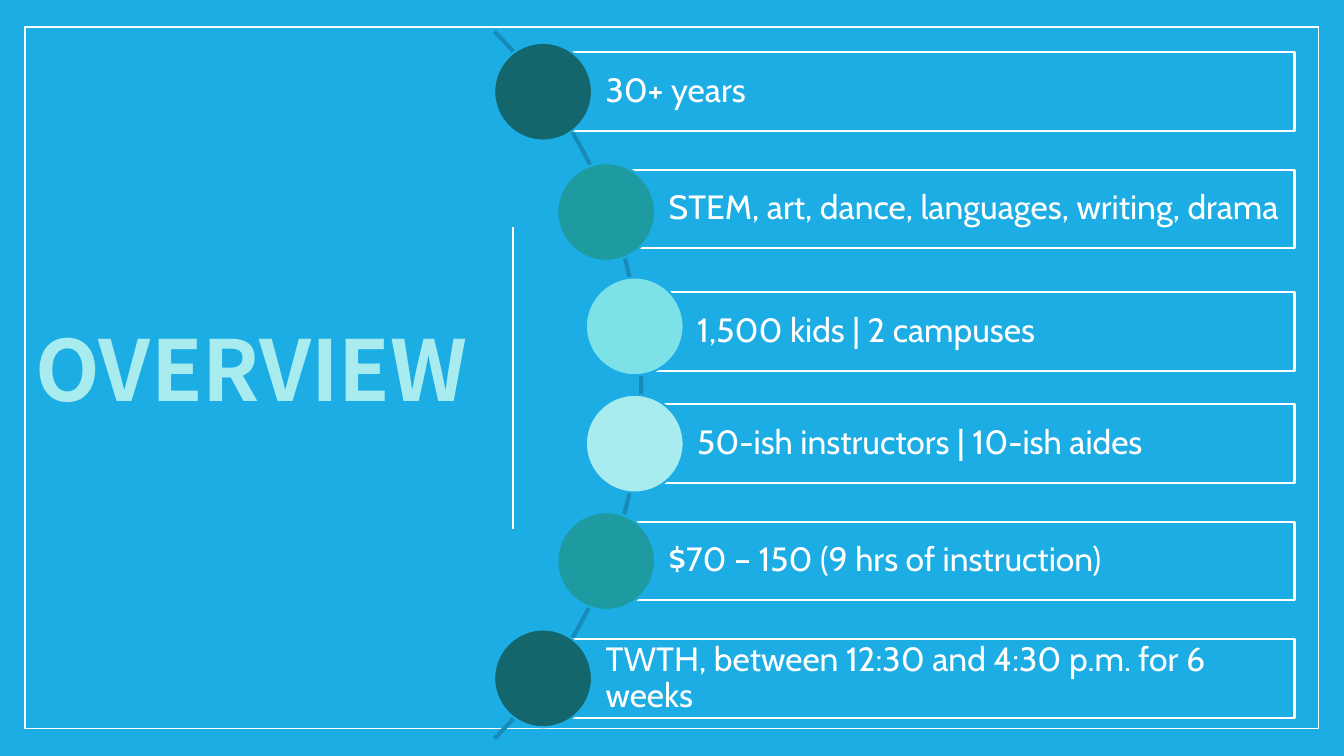
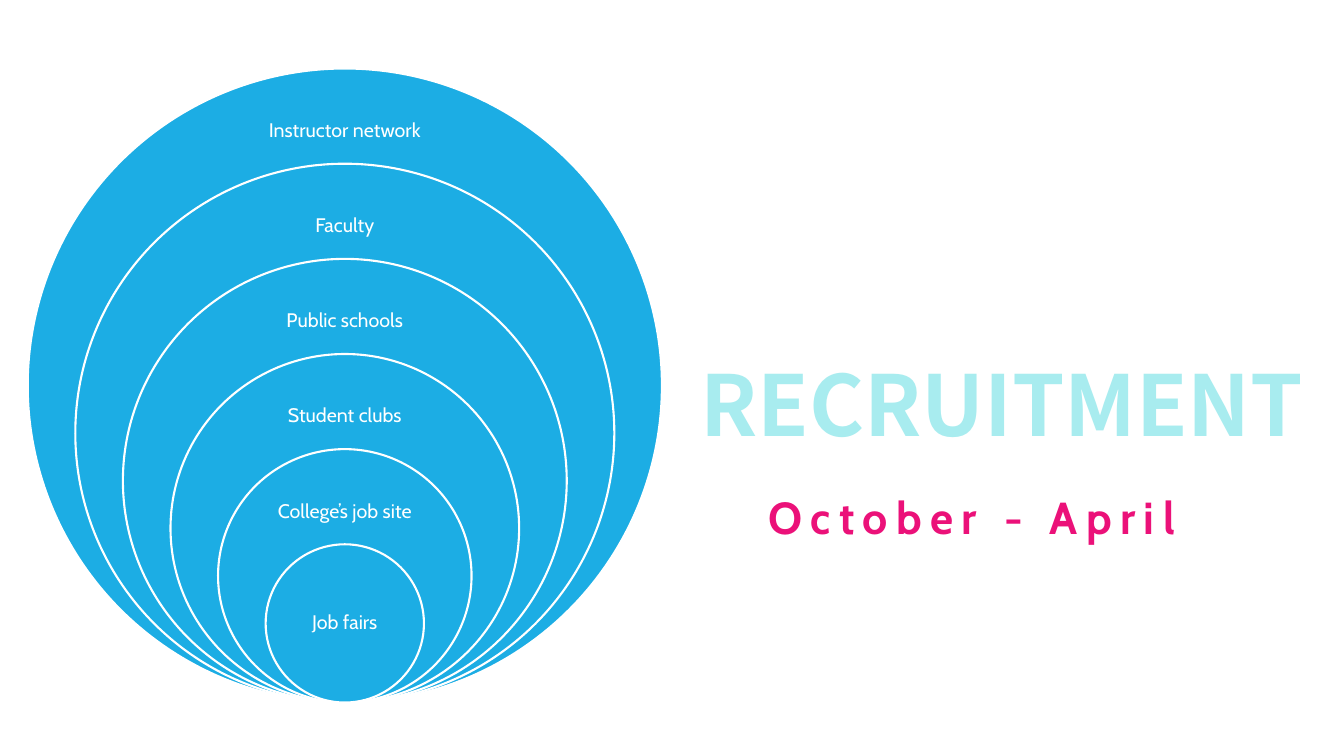
from dataclasses import dataclass
from math import sqrt

from lxml import etree
from pptx import Presentation
from pptx.dml.color import RGBColor
from pptx.enum.dml import MSO_PATTERN
from pptx.enum.shapes import MSO_CONNECTOR, MSO_SHAPE
from pptx.enum.text import MSO_ANCHOR, MSO_AUTO_SIZE, PP_ALIGN
from pptx.oxml.ns import qn
from pptx.util import Inches, Pt

RECTANGLE, OVAL, BLOCK_ARC = MSO_SHAPE.RECTANGLE, MSO_SHAPE.OVAL, MSO_SHAPE.BLOCK_ARC
LEFT, CENTER = PP_ALIGN.LEFT, PP_ALIGN.CENTER
MIDDLE, BOTTOM = MSO_ANCHOR.MIDDLE, MSO_ANCHOR.BOTTOM


@dataclass(frozen=True)
class Theme:
    blue: str = "1CADE4"
    arc: str = "168BB7"
    white: str = "FFFFFF"
    pink: str = "EB1179"
    cyan: str = "27CED7"
    darkest: str = "13676C"
    dark: str = "1D9BA1"
    light: str = "7DE2E7"
    pale: str = "A8ECEF"
    title_font: str = "Noto Sans CJK KR"
    body_font: str = "Cabin"
    title_size: float = 60
    date_size: float = 32
    fact_size: float = 24
    ring_size: float = 14
    thin: float = 1
    line: float = 1.5


THEME = Theme()
SLIDE_WIDTH, SLIDE_HEIGHT = 13.33, 7.5
TITLE_ONLY = 5

FACTS = [
    ("30+ years", THEME.darkest),
    ("STEM, art, dance, languages, writing, drama", THEME.dark),
    ("1,500 kids | 2 campuses", THEME.light),
    ("50-ish instructors | 10-ish aides", THEME.pale),
    ("$70 – 150 (9 hrs of instruction)", THEME.dark),
    ("TWTH, between 12:30 and 4:30 p.m. for 6 weeks", THEME.darkest),
]
BAR_NUDGE = {2: 0.05}
DOT_NUDGE = {1: 0.03}

CHANNELS = [
    "Instructor network",
    "Faculty",
    "Public schools",
    "Student clubs",
    "College’s job site",
    "Job fairs",
]
DATES = "October - April"


def color(value):
    return RGBColor.from_string(value)


def box(left, top, width, height):
    return [Inches(value) for value in (left, top, width, height)]


def add_shape(slide, kind, place, fill=None, line=THEME.white, width=THEME.line):
    shape = slide.shapes.add_shape(kind, *box(*place))
    shape.shadow.inherit = False
    if fill:
        shape.fill.solid()
        shape.fill.fore_color.rgb = color(fill)
    else:
        shape.fill.background()
    shape.line.color.rgb = color(line)
    shape.line.width = Pt(width)
    return shape


def write(text_frame, text, size, ink=THEME.white, align=LEFT, margins=None, bold=False):
    text_frame.text = text
    text_frame.word_wrap = True
    text_frame.vertical_anchor = MIDDLE
    if margins:
        (text_frame.margin_left, text_frame.margin_top,
         text_frame.margin_right, text_frame.margin_bottom) = box(*margins)
    paragraph = text_frame.paragraphs[0]
    paragraph.alignment = align
    paragraph.line_spacing = 0.9
    font = paragraph.runs[0].font
    font.name = THEME.body_font
    font.size = Pt(size)
    font.bold = bold
    font.color.rgb = color(ink)
    return paragraph.runs[0]


def set_title(slide, text, place, align=LEFT, anchor=MIDDLE):
    title = slide.shapes.title
    title.left, title.top, title.width, title.height = box(*place)
    text_frame = title.text_frame
    run = write(text_frame, text, THEME.title_size, align=align, bold=True)
    text_frame.auto_size = MSO_AUTO_SIZE.NONE
    text_frame.vertical_anchor = anchor
    font = run.font
    font.name = THEME.title_font
    font.fill.patterned()
    font.fill.pattern = MSO_PATTERN.NARROW_HORIZONTAL
    font.fill.fore_color.rgb = color(THEME.cyan)
    font.fill.back_color.rgb = color(THEME.pale)
    outline = etree.Element(qn("a:ln"), w=str(Pt(THEME.thin)))
    solid = etree.SubElement(outline, qn("a:solidFill"))
    etree.SubElement(solid, qn("a:srgbClr"), val=THEME.darkest)
    run.font._element.insert(0, outline)


def new_slide(presentation, background):
    slide = presentation.slides.add_slide(presentation.slide_layouts[TITLE_ONLY])
    slide.background.fill.solid()
    slide.background.fill.fore_color.rgb = color(background)
    return slide


def add_divider(slide, left, top, bottom):
    divider = slide.shapes.add_connector(
        MSO_CONNECTOR.STRAIGHT, *box(left, top, left, bottom))
    divider.line.color.rgb = color(THEME.white)
    divider.line.width = Pt(THEME.thin)
    etree.SubElement(divider._element.spPr, qn("a:effectLst"))


def build_overview(presentation):
    slide = new_slide(presentation, THEME.blue)
    margin_x, margin_y = 0.25, 0.27
    add_shape(slide, RECTANGLE,
              (margin_x, margin_y, SLIDE_WIDTH - 2 * margin_x, SLIDE_HEIGHT - 2 * margin_y),
              width=THEME.thin)
    set_title(slide, "OVERVIEW", (margin_x, 0.76, 4.71, 5.9))
    add_divider(slide, 5.09, 2.25, 5.25)

    center_x, center_y, radius = 1.41, 3.82, 4.96
    arc = add_shape(slide, BLOCK_ARC,
                    (center_x - radius, center_y - radius, 2 * radius, 2 * radius),
                    line=THEME.arc)
    for index, value in enumerate((189, 27, 0.002)):
        arc.adjustments[index] = value

    dot, bar_height, bar_right = 0.97, 0.78, 12.84
    first_y, last_y = 0.91, 6.73
    pitch = (last_y - first_y) / (len(FACTS) - 1)
    for index, (text, fill) in enumerate(FACTS):
        middle = first_y + index * pitch
        left = center_x - 0.04 + sqrt(radius ** 2 - (middle - center_y) ** 2)
        bar_top = middle - bar_height / 2 + BAR_NUDGE.get(index, 0)
        dot_top = middle - dot / 2 + DOT_NUDGE.get(index, 0)
        bar = add_shape(slide, RECTANGLE,
                        (left, bar_top, bar_right - left, bar_height), THEME.blue)
        write(bar.text_frame, text, THEME.fact_size, margins=(0.62, 0.07, 0.07, 0.07))
        add_shape(slide, OVAL, (left - dot / 2, dot_top, dot, dot), fill, THEME.blue)


def build_recruitment(presentation):
    slide = new_slide(presentation, THEME.white)
    set_title(slide, "RECRUITMENT", (6.74, 3.33, 6.39, 1.23), CENTER, BOTTOM)

    table = slide.shapes.add_table(1, 1, *box(6.19, 4.86, 6.9, 0.63)).table
    table.first_row = table.horz_banding = False
    cell = table.cell(0, 0)
    cell.fill.background()
    run = write(cell.text_frame, DATES, THEME.date_size, THEME.pink, CENTER, bold=True)
    run.font._element.set("spc", "600")

    center_x, bottom = 3.42, 6.97
    largest, smallest = 6.29, 1.57
    step = (largest - smallest) / (len(CHANNELS) - 1)
    label_width, label_height = 2.36, 0.62
    for index, channel in enumerate(CHANNELS):
        diameter = largest - index * step
        top = bottom - diameter
        add_shape(slide, OVAL, (center_x - diameter / 2, top, diameter, diameter), THEME.blue)
        innermost = index == len(CHANNELS) - 1
        middle = top + (diameter / 2 if innermost else label_height)
        label = slide.shapes.add_textbox(
            *box(center_x - label_width / 2, middle - label_height / 2,
                 label_width, label_height))
        write(label.text_frame, channel, THEME.ring_size, align=CENTER, margins=(0.11,) * 4)


def main():
    presentation = Presentation()
    presentation.slide_width = Inches(SLIDE_WIDTH)
    presentation.slide_height = Inches(SLIDE_HEIGHT)
    build_overview(presentation)
    build_recruitment(presentation)
    presentation.save("out.pptx")


if __name__ == "__main__":
    main()
